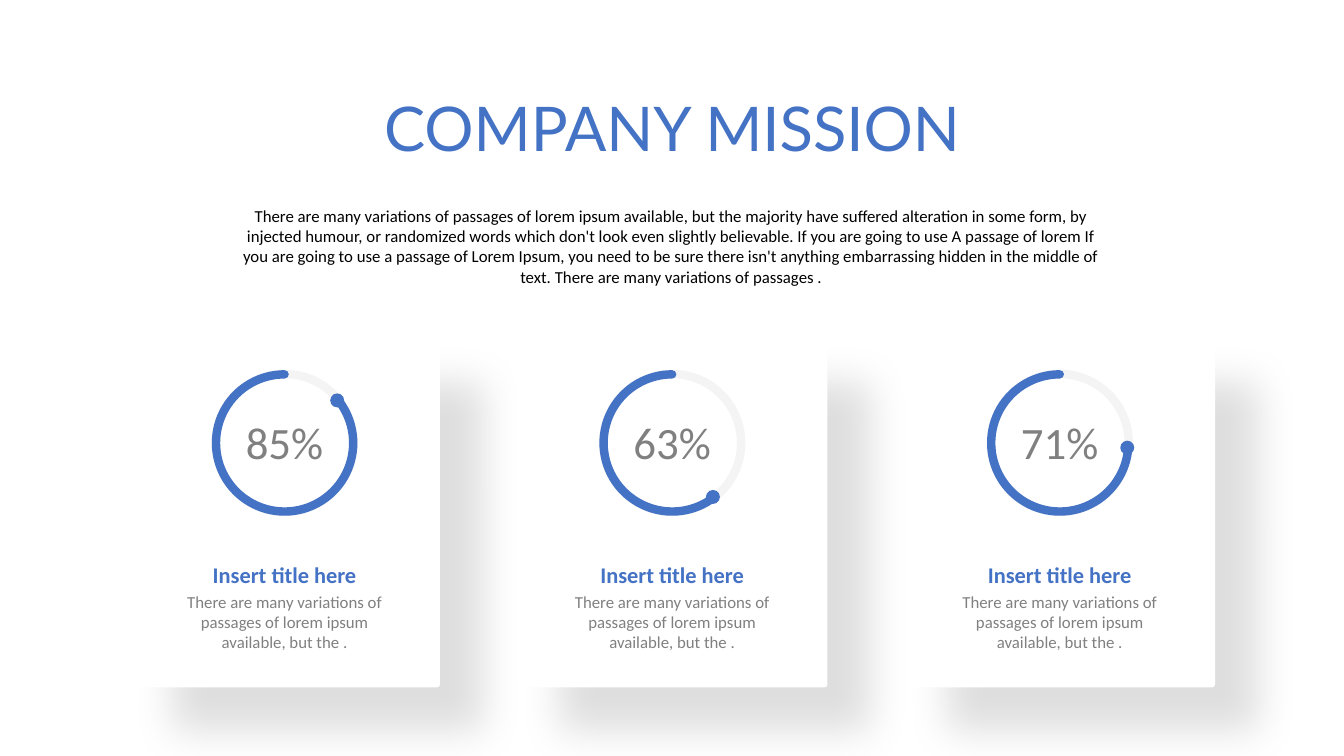
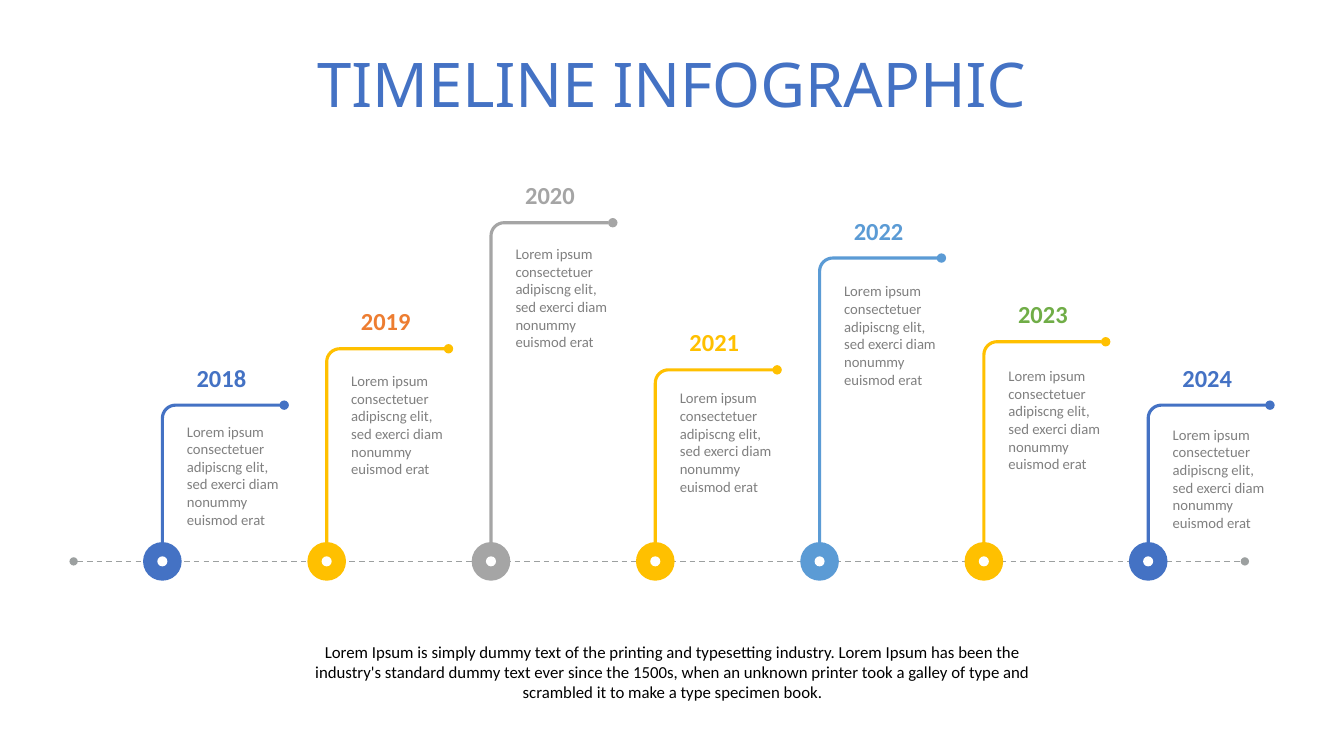
import math

import lxml.etree
import pptx
import pptx.dml.color
import pptx.enum.dml
import pptx.enum.shapes
import pptx.enum.text
import pptx.oxml.ns
import pptx.util

Pt = pptx.util.Pt
Rgb = pptx.dml.color.RGBColor.from_string
Kind = pptx.enum.shapes.MSO_SHAPE
Align = pptx.enum.text.PP_ALIGN
Anchor = pptx.enum.text.MSO_ANCHOR
qn = pptx.oxml.ns.qn


class Theme:
    blue, orange, grey, gold = "4472C4", "ED7D31", "A5A5A5", "FFC000"
    sky, green = "5B9BD5", "70AD47"
    white, black, soft, pale, axis = "FFFFFF", "000000", "808080", "BFBFBF", "9CA0A0"
    font = "Calibri"
    title, value, year, head, body, note = 44, 32, 17.5, 16, 12, 10.5
    ring, stem, thin = 6, 2.25, 1


def write(shapes, box, text, size, color, font=Theme.font, bold=False,
          align=Align.CENTER, pad=(7.2, 3.6), anchor=Anchor.TOP, title=None):
    """Put text in a new text box, or in the given title placeholder."""
    left, top, width, height = map(Pt, box)
    shape = title or shapes.add_textbox(left, top, width, height)
    shape.left, shape.top, shape.width, shape.height = left, top, width, height
    frame = shape.text_frame
    frame.word_wrap = True
    frame.auto_size = pptx.enum.text.MSO_AUTO_SIZE.NONE
    frame.vertical_anchor = anchor
    frame.margin_left = frame.margin_right = Pt(pad[0])
    frame.margin_top = frame.margin_bottom = Pt(pad[1])
    para = frame.paragraphs[0]
    para.alignment = align
    run = para.add_run()
    run.text = text
    run.font.name, run.font.size, run.font.bold = font, Pt(size), bold
    run.font.color.rgb = Rgb(color)
    return para


def draw(shapes, kind, mid, size, fill=None, line=None):
    """Draw a flat shape around its middle point."""
    left, top = mid[0] - size[0] / 2, mid[1] - size[1] / 2
    shape = shapes.add_shape(kind, *map(Pt, (left, top, *size)))
    shape.shadow.inherit = False
    if fill:
        shape.fill.solid()
        shape.fill.fore_color.rgb = Rgb(fill)
    else:
        shape.fill.background()
    if line:
        shape.line.color.rgb = Rgb(line)
        shape.line.width = Pt(Theme.ring)
    else:
        shape.line.fill.background()
    return shape


deck = pptx.Presentation()
deck.slide_width, deck.slide_height = Pt(960), Pt(540)
layout = deck.slide_layouts[5]

# Company mission: three cards with progress rings
shapes = deck.slides.add_slide(layout).shapes
write(shapes, (242, 60.5, 476.5, 60.5), "COMPANY MISSION", Theme.title, Theme.blue,
      font="Lato", title=shapes.title)
write(shapes, (172, 147, 615, 58.5),
      "There are many variations of passages of lorem ipsum available, but the majority "
      "have suffered alteration in some form, by injected humour, or randomized words "
      "which don't look even slightly believable. If you are going to use A passage of "
      "lorem If you are going to use a passage of Lorem Ipsum, you need to be sure there "
      "isn't anything embarrassing hidden in the middle of text. There are many "
      "variations of passages .", Theme.body, Theme.black, pad=(0, 0))

cards = [("85%", 321), ("63%", 53), ("71%", 4)]
first, step, ring_y = 203.3, 276.85, 316.4
for i, (value, angle) in enumerate(cards):
    x = first + i * step
    card = draw(shapes, Kind.ROUNDED_RECTANGLE, (x, 366.8), (221.8, 248.4), Theme.white)
    card.adjustments[0] = 0.01
    effect = card.element.spPr.find(qn("a:effectLst"))
    cast = lxml.etree.SubElement(effect, qn("a:outerShdw"), blurRad=str(Pt(29)),
                                 dist=str(Pt(43)), dir="2700000", algn="tl",
                                 rotWithShape="0")
    tint = lxml.etree.SubElement(cast, qn("a:srgbClr"), val=Theme.black)
    lxml.etree.SubElement(tint, qn("a:alpha"), val="13000")

    group = shapes.add_group_shape().shapes
    track = draw(group, Kind.OVAL, (x, ring_y), (98.5, 98.5), line=Theme.pale)
    tint = track.element.spPr.find(qn("a:ln")).find(".//" + qn("a:srgbClr"))
    lxml.etree.SubElement(tint, qn("a:alpha"), val="17000")
    arc = draw(group, Kind.BLOCK_ARC, (x, ring_y), (98, 98), Theme.black, Theme.blue)
    # Arc angles are stored in 1/60000 degree, adjustments in 1/100000
    for k, turn in enumerate((angle + 4, 270)):
        arc.adjustments[k] = turn * 0.6
    arc.adjustments[2] = 0
    arc.element.spPr.find(qn("a:ln")).set("cap", "rnd")
    turn = math.radians(angle)
    knob = (x + 48.3 * math.cos(turn), ring_y + 48.3 * math.sin(turn))
    draw(group, Kind.OVAL, knob, (10, 10), Theme.blue)
    write(group, (x - 38.5, 293, 77, 46), value, Theme.value, Theme.soft)

    write(shapes, (x - 62.5, 397.5, 125, 26.5), "Insert title here", Theme.head,
          Theme.blue, bold=True)
    write(shapes, (x - 75.25, 422.6, 150.5, 44),
          "There are many variations of passages of lorem ipsum available, but the .",
          Theme.body, Theme.soft, pad=(0, 0))

# Timeline: a dashed axis with one stem per year
shapes = deck.slides.add_slide(layout).shapes
para = write(shapes, (182, 35.3, 595.5, 51.8), "TIMELINE INFOGRAPHIC", Theme.title,
             Theme.blue, font="Noto Sans", title=shapes.title)
para.line_spacing = 0.9

axis_y = 401
axis = shapes.add_connector(pptx.enum.shapes.MSO_CONNECTOR.STRAIGHT,
                            *map(Pt, (52.6, axis_y, 889.2, axis_y)))
axis.line.color.rgb = Rgb(Theme.axis)
axis.line.width = Pt(Theme.thin)
axis.line.dash_style = pptx.enum.dml.MSO_LINE.DASH
for end in ("a:headEnd", "a:tailEnd"):
    lxml.etree.SubElement(axis.element.spPr.find(qn("a:ln")), qn(end), type="oval")
lxml.etree.SubElement(axis.element.spPr, qn("a:effectLst"))

# year, stem colour, year colour, stem top, note top
years = [
    ("2018", Theme.blue, Theme.blue, 289.4, 299.5),
    ("2019", Theme.gold, Theme.orange, 249.1, 263.5),
    ("2020", Theme.grey, Theme.grey, 159.1, 172.8),
    ("2021", Theme.gold, Theme.gold, 264.2, 275.8),
    ("2022", Theme.sky, Theme.sky, 184.3, 199.4),
    ("2023", Theme.gold, Theme.green, 244.1, 259.9),
    ("2024", Theme.blue, Theme.blue, 289.4, 301.7),
]
first, step, bend, parts = 116, 117.36, 9.4, 8
for i, (year, color, ink, top, note_y) in enumerate(years):
    x = first + i * step
    turns = [math.pi / 2 * k / parts for k in range(parts + 1)]
    points = [(x + bend * (1 - math.cos(t)), top + bend * (1 - math.sin(t))) for t in turns]
    points.append((x + 87, top))
    pen = shapes.build_freeform(Pt(x), Pt(391.7))
    pen.add_line_segments([(Pt(a), Pt(b)) for a, b in points], close=False)
    stem = pen.convert_to_shape()
    stem.shadow.inherit = False
    stem.fill.background()
    stem.line.color.rgb = Rgb(color)
    stem.line.width = Pt(Theme.stem)
    lxml.etree.SubElement(stem.element.spPr.find(qn("a:ln")), qn("a:tailEnd"), type="oval")

    draw(shapes, Kind.OVAL, (x, axis_y), (27.6, 27.6), color)
    draw(shapes, Kind.OVAL, (x, axis_y), (7.2, 7.2), Theme.white)
    write(shapes, (x - 3.3, top - 32.4, 91, 25.2), year, Theme.year, ink, bold=True,
          pad=(2.2, 2.2), anchor=Anchor.MIDDLE)
    write(shapes, (x + 15.3, note_y, 73, 93),
          "Lorem ipsum consectetuer adipiscng elit, sed exerci diam nonummy euismod erat",
          Theme.note, Theme.soft, align=Align.LEFT, pad=(2.2, 2.2))

write(shapes, (205, 454.5, 551, 51),
      "Lorem Ipsum is simply dummy text of the printing and typesetting industry. Lorem "
      "Ipsum has been the industry's standard dummy text ever since the 1500s, when an "
      "unknown printer took a galley of type and scrambled it to make a type specimen "
      "book.", Theme.body, Theme.black)

deck.save("out.pptx")
